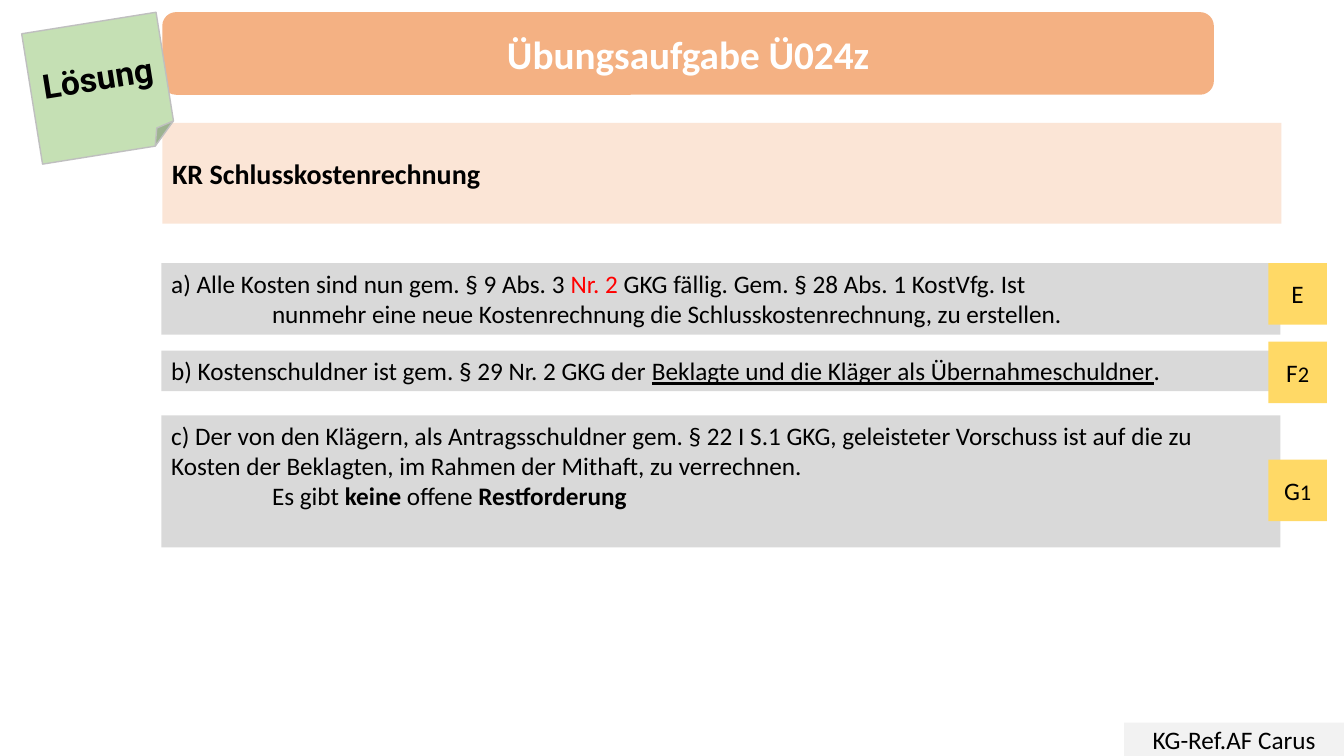
import pptx
import pptx.util
import pptx.dml.color
import pptx.enum.shapes
import pptx.enum.text

Inches = pptx.util.Inches
Kind = pptx.enum.shapes.MSO_SHAPE
Align = pptx.enum.text.PP_ALIGN
Anchor = pptx.enum.text.MSO_ANCHOR


def color(code):
    return pptx.dml.color.RGBColor.from_string(code)


def write(para, text, size=18, font="Calibri", ink="000000", bold=False, under=False):
    run = para.add_run()
    run.text = text
    run.font.size = pptx.util.Pt(size)
    run.font.name = font
    run.font.bold = bold
    run.font.underline = under
    run.font.color.rgb = color(ink)


def block(slide, left, top, width, height, fill, kind=Kind.RECTANGLE, line=None):
    shape = slide.shapes.add_shape(
        kind, Inches(left), Inches(top), Inches(width), Inches(height))
    shape.shadow.inherit = False
    shape.fill.solid()
    shape.fill.fore_color.rgb = color(fill)
    if line:
        shape.line.color.rgb = color(line)
        shape.line.width = pptx.util.Pt(1)
    else:
        shape.line.fill.background()
    shape.text_frame.word_wrap = True
    shape.text_frame.vertical_anchor = Anchor.MIDDLE
    return shape


def label(shape, text, align=Align.CENTER, **style):
    para = shape.text_frame.paragraphs[0]
    para.alignment = align
    write(para, text, **style)
    return para


def answer(slide, top, height, lines):
    frame = block(slide, 1.6, top, 11.1, height, "D9D9D9").text_frame
    frame.vertical_anchor = Anchor.TOP
    for row, parts in enumerate(lines):
        para = frame.add_paragraph() if row else frame.paragraphs[0]
        para.alignment = Align.LEFT
        if row:
            para._p.get_or_add_pPr().set("marL", str(Inches(1)))
        for text, style in parts:
            write(para, text, **style)


def badge(slide, top, letter, digit):
    para = label(block(slide, 12.58, top, 0.58, 0.61, "FFD966"), letter)
    if digit:
        write(para, digit, size=16)


def main():
    deck = pptx.Presentation()
    deck.slide_width = Inches(13.33)
    deck.slide_height = Inches(7.5)
    slide = deck.slides.add_slide(deck.slide_layouts[6])

    label(block(slide, 1.61, 1.22, 11.1, 1, "FBE5D6"),
          "KR Schlusskostenrechnung", align=Align.LEFT, size=20, bold=True)
    label(block(slide, 11.15, 7.17, 2.18, 0.33, "F2F2F2"), "KG-Ref.AF Carus")

    plain, strong = {}, {"bold": True}
    answers = [
        (2.61, 0.71, [
            [("a) Alle Kosten sind nun gem. § 9 Abs. 3 ", plain),
             ("Nr. 2 ", {"ink": "FF0000"}),
             ("GKG fällig. Gem. § 28 Abs. 1 KostVfg. Ist", plain)],
            [("nunmehr eine neue Kostenrechnung die Schlusskostenrechnung, "
              "zu erstellen.", plain)]]),
        (3.48, 0.4, [
            [("b) Kostenschuldner ist gem. § 29 Nr. 2 GKG der ", plain),
             ("Beklagte und die Kläger als Übernahmeschuldner", {"under": True}),
             (".", plain)]]),
        (4.12, 1.31, [
            [("c) Der von den Klägern, als Antragsschuldner gem. § 22 I S.1 GKG, "
              "geleisteter Vorschuss ist auf die zu \tKosten der Beklagten, "
              "im Rahmen der Mithaft, zu verrechnen.", plain)],
            [("Es gibt ", plain), ("keine", strong),
             (" offene ", plain), ("Restforderung", strong)]]),
    ]
    for top, height, lines in answers:
        answer(slide, top, height, lines)

    label(block(slide, 1.61, 0.12, 10.43, 0.82, "F4B183", Kind.ROUNDED_RECTANGLE),
          "Übungsaufgabe Ü024z", size=28, ink="FFFFFF", bold=True)
    note = block(slide, 0.31, 0.22, 1.35, 1.31, "C5E0B4", Kind.FOLDED_CORNER, "BFBFBF")
    note.rotation = 350.9
    label(note, "Lösung", size=24, font="Roboto", bold=True)

    for top, letter, digit in [(2.61, "E", ""), (3.39, "F", "2"), (4.56, "G", "1")]:
        badge(slide, top, letter, digit)

    deck.save("out.pptx")


if __name__ == "__main__":
    main()
